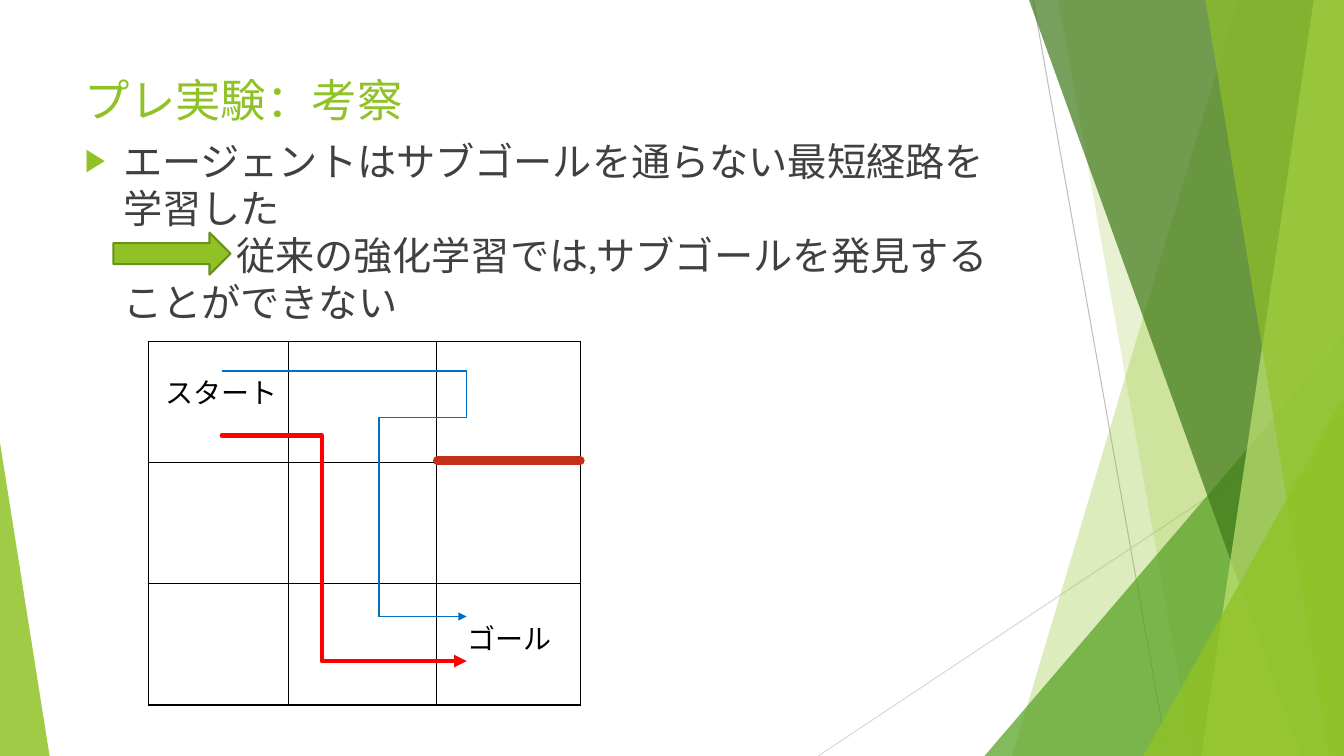
from lxml.etree import SubElement
from pptx import Presentation
from pptx.dml.color import RGBColor
from pptx.enum.shapes import MSO_CONNECTOR, MSO_SHAPE
from pptx.enum.text import MSO_ANCHOR, MSO_AUTO_SIZE, PP_ALIGN
from pptx.oxml.ns import qn
from pptx.util import Inches, Pt

THEME = {
    "font": "Karla",
    "title_size": 32.4, "body_size": 28, "label_size": 20,
    "green": "90C226", "mid_green": "54A021", "dark_green": "3F7819",
    "light_green": "C0E474", "arrow_edge": "6B901C",
    "body": "404040", "black": "000000", "wall": "C42F1A",
    "red": "FF0000", "blue": "0070C0", "gray": "BFBFBF", "pale_gray": "D9D9D9",
}
COLUMNS, ROWS = 160, 90

deck = Presentation()
deck.slide_width, deck.slide_height = Inches(13.33), Inches(7.5)
page = deck.slides.add_slide(deck.slide_layouts[1])
shapes = page.shapes


def place(*cells):
    units = (deck.slide_width / COLUMNS, deck.slide_height / ROWS)
    return [round(cell * units[index % 2]) for index, cell in enumerate(cells)]


def draw_line(kind, ends, color, width, cap="flat", tail=False, bend=None):
    line = shapes.add_connector(kind, *place(*ends))
    line.line.color.rgb = RGBColor.from_string(THEME[color])
    line.line.width = Pt(width)
    outline = line.element.spPr.find(qn("a:ln"))
    outline.set("cap", cap)
    if tail:
        SubElement(outline, qn("a:tailEnd"), type="triangle")
    SubElement(line.element.spPr, qn("a:effectLst"))
    if bend:
        guides = line.element.spPr.find(qn("a:prstGeom")).find(qn("a:avLst"))
        SubElement(guides, qn("a:gd"), name="adj1", fmla=f"val {round(bend * 100000)}")
    return line


straight, elbow = MSO_CONNECTOR.STRAIGHT, MSO_CONNECTOR.ELBOW
draw_line(straight, (123, 0, 139, ROWS), "gray", 0.75)
draw_line(straight, (COLUMNS, 48.4, 97.4, ROWS), "pale_gray", 0.75)

backdrop = [
    ("band", (147.36, 120.5), "green", 30),
    ("band", (126, 142), "green", 20),
    ("triangle", (117.2, 40, COLUMNS, 1), "mid_green", 72),
    ("band", (122.5, 154.9), "dark_green", 70),
    ("band", (156.4, 143), "light_green", 70),
    ("band", (143.5, 158.2), "green", 65),
    ("triangle", (136.1, 47.2, COLUMNS, 1), "green", 80),
    ("triangle", (0, 52.7, 5.9, 0), "green", 85),
]
for kind, outline, color, opacity in backdrop:
    if kind == "band":
        top, bottom = outline
        builder = shapes.build_freeform(*place(top, 0))
        corners = [(COLUMNS, 0), (COLUMNS, ROWS), (bottom, ROWS)]
        builder.add_line_segments([place(*corner) for corner in corners], close=True)
        facet = builder.convert_to_shape()
    else:
        left, top, right, apex = outline
        facet = shapes.add_shape(MSO_SHAPE.ISOSCELES_TRIANGLE, *place(left, top, right - left, ROWS - top))
        facet.adjustments[0] = apex
    facet.shadow.inherit = False
    facet.fill.solid()
    facet.fill.fore_color.rgb = RGBColor.from_string(THEME[color])
    facet.line.fill.background()
    tint = facet.element.spPr.find(qn("a:solidFill")).find(qn("a:srgbClr"))
    SubElement(tint, qn("a:alpha"), val=str(opacity * 1000))

title, body = shapes.title, page.placeholders[1]
for box in (title, body):
    box.element.getparent().append(box.element)

arrow = shapes.add_shape(MSO_SHAPE.RIGHT_ARROW, *place(13.5, 27.7, 13.95, 5))
arrow.shadow.inherit = False
arrow.fill.solid()
arrow.fill.fore_color.rgb = RGBColor.from_string(THEME["green"])
arrow.line.color.rgb = RGBColor.from_string(THEME["arrow_edge"])
arrow.line.width = Pt(1.5)

maze_columns, maze_row = (16.7, 17.6, 17.2), 14.43
maze = shapes.add_table(3, 3, *place(17.65, 40.65, sum(maze_columns), 3 * maze_row)).table
for column, width in zip(maze.columns, maze_columns):
    column.width = place(width)[0]
for row in maze.rows:
    row.height = place(0, maze_row)[1]
for cell in maze.iter_cells():
    properties = cell._tc.get_or_add_tcPr()
    for side in ("lnL", "lnR", "lnT", "lnB"):
        border = SubElement(properties, qn(f"a:{side}"), w=str(Pt(1)))
        SubElement(SubElement(border, qn("a:solidFill")), qn("a:srgbClr"), val=THEME["black"])
    cell.fill.background()

start, goal = [shapes.add_textbox(0, 0, 0, 0) for label in range(2)]
left, top = PP_ALIGN.LEFT, MSO_ANCHOR.TOP
fixed, grow = MSO_AUTO_SIZE.NONE, MSO_AUTO_SIZE.SHAPE_TO_FIT_TEXT
heading_frame = {"word_wrap": True, "auto_size": fixed, "vertical_anchor": top}
label_frame = {"word_wrap": False, "auto_size": grow, "vertical_anchor": top}
label_para = {"alignment": PP_ALIGN.CENTER}
texts = [
    (title, (8.9, 8, 112.8, 6.2), heading_frame,
     {"alignment": left, "line_spacing": Pt(39)}, "title_size", "green",
     ["プレ実験：考察"]),
    (body, (8.9, 15.7, 112.8, 63.6), heading_frame,
     {"alignment": left, "line_spacing": Pt(33.6), "space_before": Pt(0)}, "body_size", "body",
     ["エージェントはサブゴールを通らない最短経路を学習した",
      "従来の強化学習では,サブゴールを発見することができない"]),
    (start, (18.5, 44.15, 15.8, 5.3), label_frame, label_para, "label_size", "black", ["スタート"]),
    (goal, (54.4, 73.4, 12.5, 5.3), label_frame, label_para, "label_size", "black", ["ゴール"]),
]
for box, area, frame_format, para_format, size, color, lines in texts:
    for name, value in zip(("left", "top", "width", "height"), place(*area)):
        setattr(box, name, value)
    for name, value in frame_format.items():
        setattr(box.text_frame, name, value)
    for index, line in enumerate(lines):
        para = box.text_frame.add_paragraph() if index else box.text_frame.paragraphs[0]
        for name, value in para_format.items():
            setattr(para, name, value)
        span = para.add_run()
        span.text = line
        span.font.color.rgb = RGBColor.from_string(THEME[color])
        for name, value in {"size": Pt(THEME[size]), "name": THEME["font"]}.items():
            setattr(span.font, name, value)
        SubElement(span._r.get_or_add_rPr(), qn("a:ea"), typeface=THEME["font"])

for para, indent in zip(body.text_frame.paragraphs, (-0.38, 1.12)):
    properties = para._p.get_or_add_pPr()
    properties.set("marL", str(Inches(0.38)))
    properties.set("indent", str(Inches(indent)))
    if indent > 0:
        SubElement(properties, qn("a:buNone"))
    else:
        SubElement(SubElement(properties, qn("a:buClr")), qn("a:srgbClr"), val=THEME["green"])
        SubElement(properties, qn("a:buSzPct"), val="80000")
        SubElement(properties, qn("a:buFont"), typeface=THEME["font"])
        SubElement(properties, qn("a:buChar"), char="▶")

path_start, path_end, turn = 26.4, 55.55, 45.1
blue_top, blue_bottom = 44.15, 73.4
draw_line(straight, (52.05, 54.85, 69.1, 54.85), "wall", 6, cap="rnd")
draw_line(elbow, (path_start, 51.85, path_end, 78.7), "red", 3, cap="rnd", tail=True, bend=0.408)
draw_line(straight, (path_start, blue_top, path_end, blue_top), "blue", 1)

middle_column, middle_row = (turn + path_end) / 2, (blue_top + blue_bottom) / 2
half_run, half_step = (blue_bottom - blue_top) / 2, (path_end - turn) / 2
detour = draw_line(
    elbow,
    (middle_column - half_run, middle_row - half_step, middle_column + half_run, middle_row + half_step),
    "blue", 1, bend=0.191)
detour.element.spPr.find(qn("a:xfrm")).set("rot", str(90 * 60000))
draw_line(straight, (turn, blue_bottom, path_end, blue_bottom), "blue", 1, tail=True)

deck.save("out.pptx")
